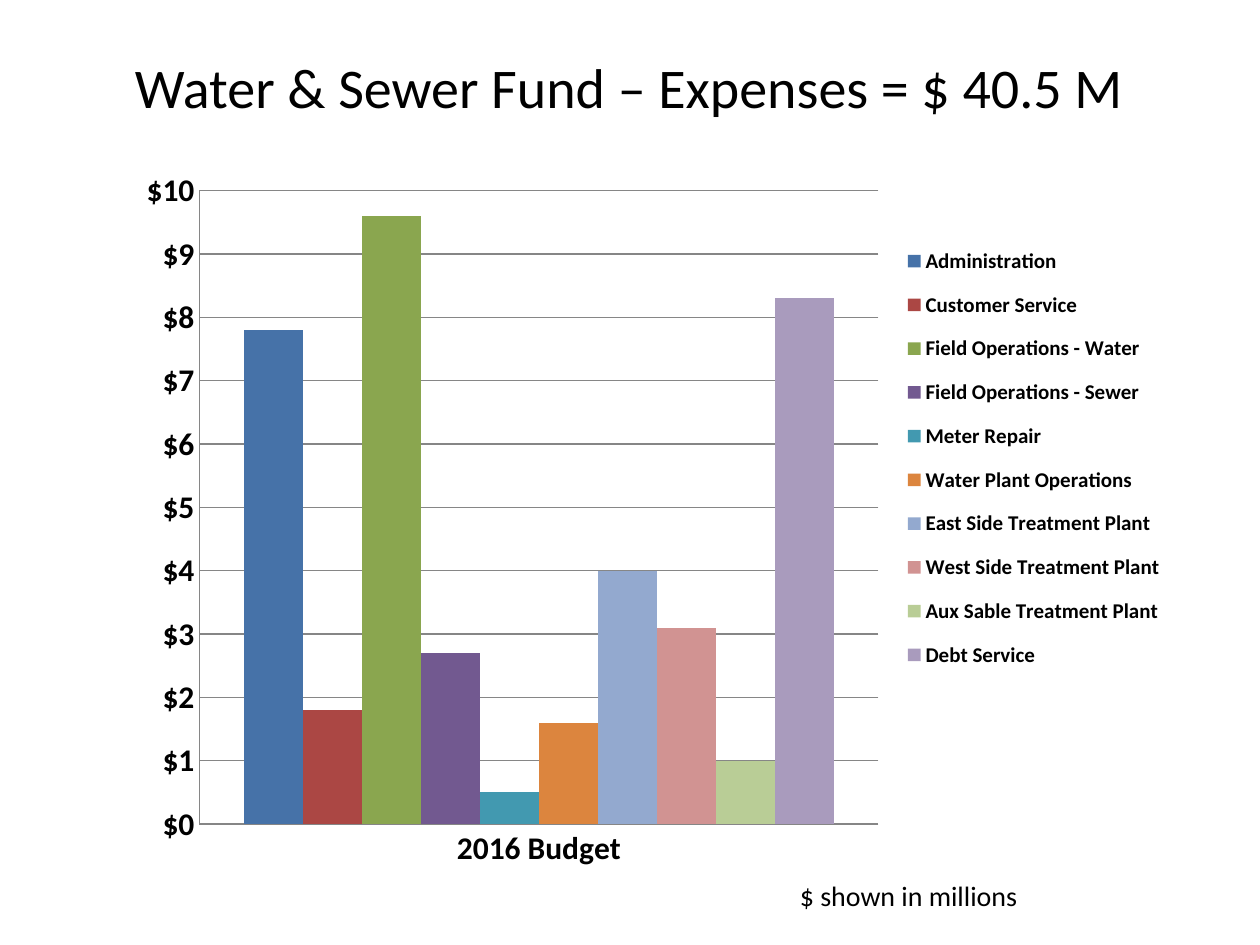
from dataclasses import dataclass

from lxml import etree
from pptx import Presentation
from pptx import util as u
from pptx.chart.data import CategoryChartData
from pptx.dml.color import RGBColor
from pptx.enum import chart as ch
from pptx.enum import text as tx
from pptx.oxml.ns import qn


@dataclass(frozen=True)
class Theme:
    font: str = "Calibri"
    ink: str = "000000"
    rule: str = "868686"
    title_size: int = 32
    axis_size: int = 18
    note_size: int = 16
    legend_size: int = 12


THEME = Theme()

# Department, expense in millions, bar colour
EXPENSES = [
    ("Administration", 7.8, "4672A8"),
    ("Customer Service", 1.8, "AB4744"),
    ("Field Operations - Water", 9.6, "8AA64F"),
    ("Field Operations - Sewer", 2.7, "725990"),
    ("Meter Repair", 0.5, "4299B0"),
    ("Water Plant Operations", 1.6, "DC853E"),
    ("East Side Treatment Plant", 4, "93A9CF"),
    ("West Side Treatment Plant", 3.1, "D19392"),
    ("Aux Sable Treatment Plant", 1, "B9CD96"),
    ("Debt Service", 8.3, "A99BBD"),
]


def style_font(font, size, bold=False):
    font.name = THEME.font
    font.size = u.Pt(size)
    font.bold = bold
    font.color.rgb = RGBColor.from_string(THEME.ink)


def add_text(slide, content, box, size, align=tx.PP_ALIGN.LEFT, anchor=tx.MSO_ANCHOR.TOP):
    frame = slide.shapes.add_textbox(*map(u.Inches, box)).text_frame
    frame.word_wrap = True
    frame.vertical_anchor = anchor
    line = frame.paragraphs[0]
    line.alignment = align
    run = line.add_run()
    run.text = content
    style_font(run.font, size)


def set_layout(part, inner=False, **fractions):
    """Place a chart part by fractions (x, y, w, h) of the chart area."""
    layout = part.find(qn("c:layout"))
    if layout is None:
        layout = etree.Element(qn("c:layout"))
        # The layout comes first in a plot area, after the position in a legend
        part.insert(0 if inner else 1, layout)
    manual = etree.SubElement(layout, qn("c:manualLayout"))
    settings = {"layoutTarget": "inner"} if inner else {}
    settings |= {"xMode": "edge", "yMode": "edge"} | fractions
    for tag, value in settings.items():
        etree.SubElement(manual, qn(f"c:{tag}")).set("val", str(value))


def style_axis(axis):
    style_font(axis.tick_labels.font, THEME.axis_size, bold=True)
    axis.major_tick_mark = axis.minor_tick_mark = ch.XL_TICK_MARK.NONE
    axis.format.line.color.rgb = RGBColor.from_string(THEME.rule)


def add_expense_chart(slide, box):
    budget = CategoryChartData()
    budget.categories = ["2016 Budget"]
    for department, amount, _ in EXPENSES:
        budget.add_series(department, [amount])
    chart = slide.shapes.add_chart(
        ch.XL_CHART_TYPE.COLUMN_CLUSTERED, *map(u.Inches, box), budget
    ).chart
    chart.has_title = False
    style_font(chart.font, THEME.axis_size)

    # Bars
    bars = chart.plots[0]
    bars.gap_width = 150
    bars.overlap = 0
    bars.vary_by_categories = False
    for bar, (_, _, color) in zip(bars.series, EXPENSES):
        bar.format.fill.solid()
        bar.format.fill.fore_color.rgb = RGBColor.from_string(color)

    # Axes
    style_axis(chart.category_axis)
    dollars = chart.value_axis
    style_axis(dollars)
    dollars.minimum_scale, dollars.maximum_scale, dollars.major_unit = 0, 10, 1
    dollars.tick_labels.number_format = '"$"#,##0'
    dollars.tick_labels.number_format_is_linked = False
    dollars.has_major_gridlines = True
    dollars.major_gridlines.format.line.color.rgb = RGBColor.from_string(THEME.rule)

    # Legend and plot placement
    chart.has_legend = True
    legend = chart.legend
    legend.position = ch.XL_LEGEND_POSITION.RIGHT
    legend.include_in_layout = False
    style_font(legend.font, THEME.legend_size, bold=True)
    plot_area = bars._element.getparent()
    set_layout(plot_area, inner=True, x=0.07, y=0.046, w=0.647, h=0.874)
    set_layout(legend._element, x=0.74, y=0.1, w=0.25, h=0.63)


def main():
    deck = Presentation()
    deck.slide_width, deck.slide_height = u.Inches(10), u.Inches(7.5)
    slide = deck.slides.add_slide(deck.slide_layouts[6])

    # Heading
    add_text(slide, "Water & Sewer Fund – Expenses = $ 40.5 M", (0.83, 0.33, 8.33, 0.7),
             THEME.title_size, align=tx.PP_ALIGN.CENTER, anchor=tx.MSO_ANCHOR.MIDDLE)
    # Expenses by department
    add_expense_chart(slide, (1, 1.25, 8.33, 5.75))
    # Unit note
    add_text(slide, "$ shown in millions", (6.25, 6.92, 2.58, 0.37), THEME.note_size)

    deck.save("out.pptx")


if __name__ == "__main__":
    main()
